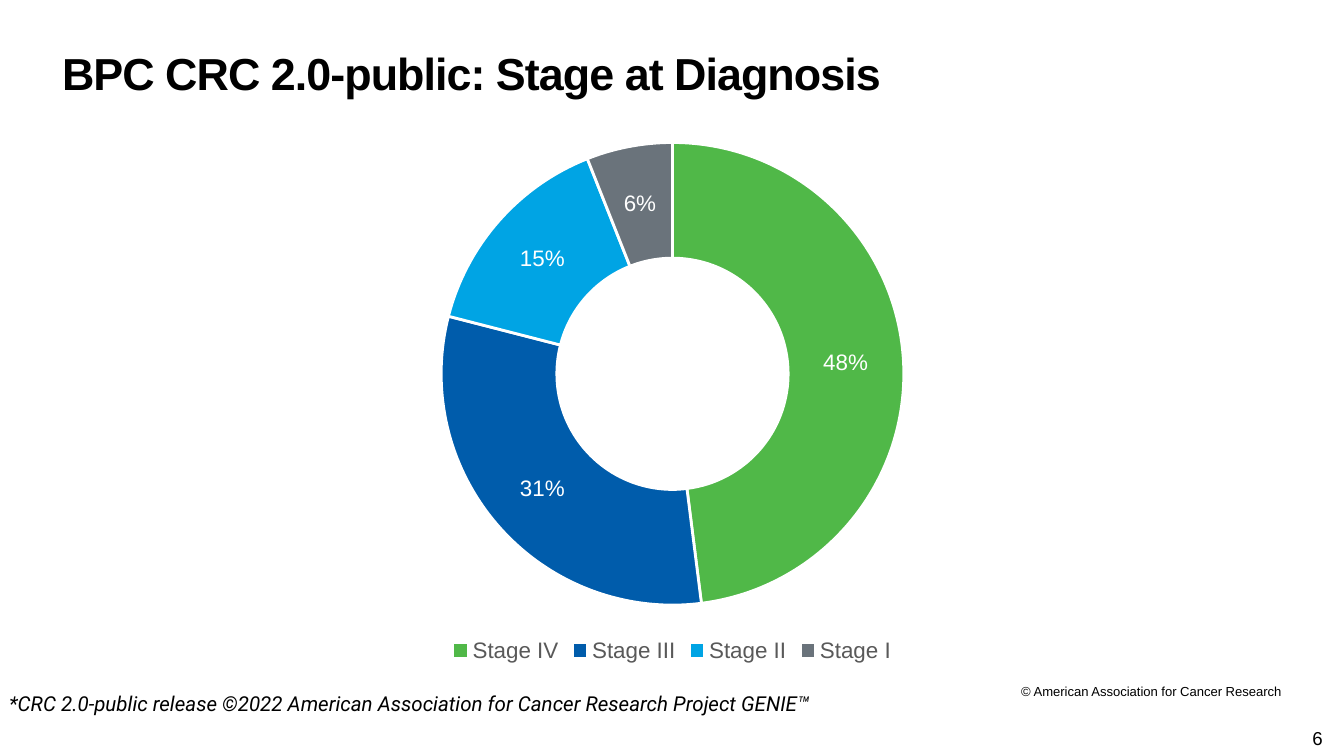
from pptx import Presentation
from pptx.chart.data import CategoryChartData
from pptx.dml.color import RGBColor
from pptx.enum.chart import XL_CHART_TYPE, XL_LEGEND_POSITION
from pptx.enum.text import MSO_ANCHOR, PP_ALIGN
from pptx.util import Pt

DOUGHNUT = XL_CHART_TYPE.DOUGHNUT
LEGEND_BOTTOM = XL_LEGEND_POSITION.BOTTOM
TOP, MIDDLE, BOTTOM = MSO_ANCHOR.TOP, MSO_ANCHOR.MIDDLE, MSO_ANCHOR.BOTTOM
LEFT, RIGHT = PP_ALIGN.LEFT, PP_ALIGN.RIGHT

BLACK = RGBColor(0x00, 0x00, 0x00)
WHITE = RGBColor(0xFF, 0xFF, 0xFF)
LEGEND_GREY = RGBColor(0x59, 0x59, 0x59)
GREEN = RGBColor(0x50, 0xB8, 0x48)
BLUE = RGBColor(0x00, 0x5C, 0xAB)
SKY = RGBColor(0x00, 0xA4, 0xE4)
SLATE = RGBColor(0x6A, 0x73, 0x7B)

STAGES = [
    ("Stage IV", 48, GREEN),
    ("Stage III", 31, BLUE),
    ("Stage II", 15, SKY),
    ("Stage I", 6, SLATE),
]


def px(*lengths):
    """Turn pixels, 1344 to the slide's 10 inches, into EMU."""
    return [round(length * 9144000 / 1344) for length in lengths]


def set_font(font, size, color, name="Arial"):
    font.name = name
    font.size = Pt(size)
    font.color.rgb = color


deck = Presentation()
deck.slide_width, deck.slide_height = px(1344, 756)
page = deck.slides.add_slide(deck.slide_layouts[5])

# Title
title = page.shapes.title
title.left, title.top, title.width, title.height = px(52, 26, 886, 78)
frame = title.text_frame
frame.word_wrap = True
frame.vertical_anchor = BOTTOM
frame.margin_left, frame.margin_right = px(10, 10)
frame.margin_top, frame.margin_bottom = px(5, 5)
para = frame.paragraphs[0]
para.alignment = LEFT
para.line_spacing = Pt(21.8)
span = para.add_run()
span.text = "BPC CRC 2.0-public: Stage at Diagnosis"
set_font(span.font, 24, BLACK)
span.font.bold = True
span.font._element.set("spc", "-50")

# Stage doughnut
data = CategoryChartData(number_format="0")
data.categories = [stage for stage, share, color in STAGES]
data.add_series("Series 1", [share for stage, share, color in STAGES])
chart = page.shapes.add_chart(DOUGHNUT, *px(242, 124, 861, 544), data).chart
set_font(chart.font, 10, BLACK)
chart.has_title = False
chart.has_legend = True
chart.legend.position = LEGEND_BOTTOM
chart.legend.include_in_layout = False
set_font(chart.legend.font, 12, LEGEND_GREY)

plot = chart.plots[0]
plot.vary_by_categories = True
plot._element.xpath("c:holeSize")[0].set("val", "49")
series = plot.series[0]
for index, (stage, share, color) in enumerate(STAGES):
    slice_format = series.points[index].format
    slice_format.fill.solid()
    slice_format.fill.fore_color.rgb = color
    slice_format.line.color.rgb = WHITE
    slice_format.line.width = Pt(1.5)

labels = series.data_labels
labels.show_percentage = True
labels.show_value = False
labels.number_format = "0%"
labels.number_format_is_linked = False
set_font(labels.font, 12, WHITE)

# Copyright, page number and release note
notes = [
    ("© American Association for Cancer Research",
     (1008, 677, 292, 30), 7, "Arial", False, LEFT, TOP),
    ("6", (1023, 718, 313, 40), 10, "Arial", False, RIGHT, MIDDLE),
    ("*CRC 2.0-public release ©2022 American Association for Cancer Research Project GENIE™",
     (-4, 684, 892, 79), 11, "Roboto", True, LEFT, TOP),
]
for text, place, size, font_name, italic, alignment, anchor in notes:
    box = page.shapes.add_textbox(*px(*place))
    frame = box.text_frame
    frame.word_wrap = True
    frame.vertical_anchor = anchor
    para = frame.paragraphs[0]
    para.alignment = alignment
    span = para.add_run()
    span.text = text
    set_font(span.font, size, BLACK, font_name)
    span.font.italic = italic

deck.save("out.pptx")
